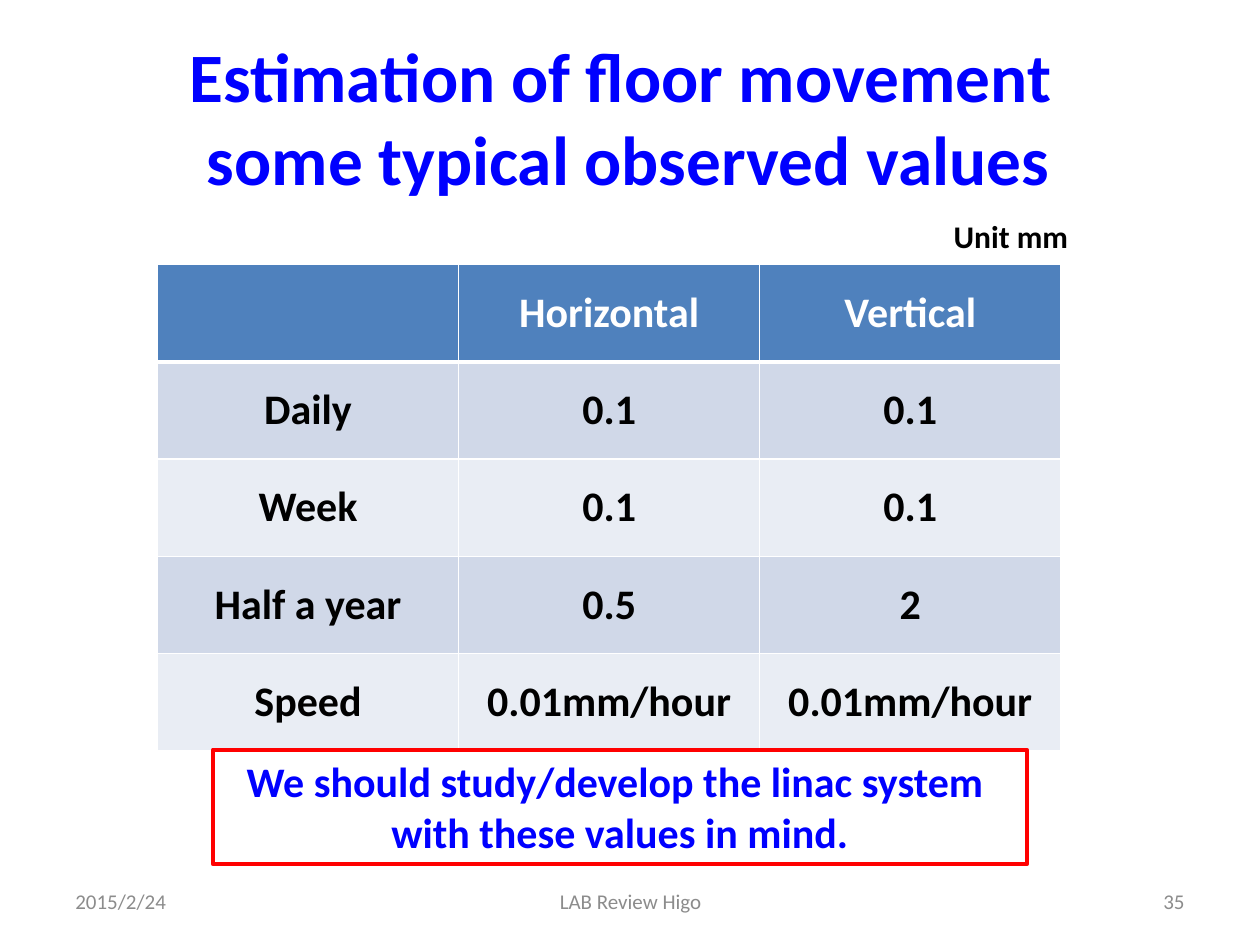
from lxml import etree
from pptx import Presentation
from pptx.dml.color import RGBColor
from pptx.enum import shapes, text
from pptx.oxml import ns
from pptx.util import Inches, Pt

BLUE, RED, BLACK, WHITE, GRAY = "0000FF", "FF0000", "000000", "FFFFFF", "8C8C8C"
HEADER_FILL, BAND_FILLS = "4F81BD", ("D0D8E8", "E9EDF4")
LEFT, CENTER, RIGHT = text.PP_ALIGN.LEFT, text.PP_ALIGN.CENTER, text.PP_ALIGN.RIGHT
ROWS = [
    ("", "Horizontal", "Vertical"),
    ("Daily", "0.1", "0.1"),
    ("Week", "0.1", "0.1"),
    ("Half a year", "0.5", "2"),
    ("Speed", "0.01mm/hour", "0.01mm/hour"),
]


def color(value):
    return RGBColor.from_string(value)


def write(frame, lines, size, font_color, bold=True, align=CENTER):
    """Fill a text frame with one paragraph for each line."""
    frame.text = "\n".join(lines)
    font_format = {"name": "Calibri", "size": Pt(size), "bold": bold}
    for paragraph in frame.paragraphs:
        paragraph.alignment = align
        for run in paragraph.runs:
            for name, value in font_format.items():
                setattr(run.font, name, value)
            run.font.color.rgb = color(font_color)


def place(shape, box):
    for name, value in zip(("left", "top", "width", "height"), box):
        setattr(shape, name, Inches(value))


def add_title(slide, box):
    title = slide.shapes.title
    place(title, box)
    frame = title.text_frame
    frame.auto_size = text.MSO_AUTO_SIZE.NONE
    frame.vertical_anchor = text.MSO_ANCHOR.MIDDLE
    write(frame, ["Estimation of floor movement\v some typical observed values"], 39.6, BLUE)


def add_label(slide, box, label, wrap=True, anchor=text.MSO_ANCHOR.MIDDLE, **style):
    frame = slide.shapes.add_textbox(*map(Inches, box)).text_frame
    frame.word_wrap = wrap
    frame.vertical_anchor = anchor
    write(frame, [label], **style)


def add_footer(slide, top, height):
    items = [
        ("2015/2/24", 0.5, 2.33, LEFT),
        ("LAB Review Higo", 3.42, 3.17, CENTER),
        ("35", 7.17, 2.33, RIGHT),
    ]
    for label, left, width, align in items:
        add_label(slide, (left, top, width, height), label,
                  size=12, font_color=GRAY, bold=False, align=align)


def set_borders(cell, widths):
    """Draw white borders; widths maps a side (L, R, T, B) to points."""
    properties = cell._tc.get_or_add_tcPr()
    for index, (side, width) in enumerate(widths.items()):
        line = etree.Element(ns.qn(f"a:ln{side}"), w=str(Pt(width)))
        fill = etree.SubElement(line, ns.qn("a:solidFill"))
        etree.SubElement(fill, ns.qn("a:srgbClr"), val=WHITE)
        properties.insert(index, line)


def add_values_table(slide, box):
    table = slide.shapes.add_table(len(ROWS), len(ROWS[0]), *map(Inches, box)).table
    for column in table.columns:
        column.width = Inches(box[2] / len(ROWS[0]))
    for row_index, values in enumerate(ROWS):
        header = row_index == 0
        fill = HEADER_FILL if header else BAND_FILLS[(row_index - 1) % 2]
        widths = {"L": 1, "R": 1, "T": 3 if row_index == 1 else 1, "B": 3 if header else 1}
        for column_index, value in enumerate(values):
            cell = table.cell(row_index, column_index)
            cell.vertical_anchor = text.MSO_ANCHOR.MIDDLE
            cell.fill.solid()
            cell.fill.fore_color.rgb = color(fill)
            write(cell.text_frame, [value], 24, WHITE if header else BLACK)
            set_borders(cell, widths)


def add_conclusion(slide, box):
    shape = slide.shapes.add_shape(shapes.MSO_SHAPE.RECTANGLE, *map(Inches, box))
    shape.shadow.inherit = False
    shape.fill.background()
    shape.line.color.rgb = color(RED)
    shape.line.width = Pt(2.25)
    shape.text_frame.word_wrap = True
    shape.text_frame.vertical_anchor = text.MSO_ANCHOR.TOP
    write(shape.text_frame,
          ["We should study/develop the linac system ", "with these values in mind."], 24, BLUE)


def main():
    presentation = Presentation()
    presentation.slide_width, presentation.slide_height = Inches(10), Inches(7.5)
    slide = presentation.slides.add_slide(presentation.slide_layouts[5])
    add_title(slide, (0.28, 0.3, 9.29, 1.25))
    add_footer(slide, 6.95, 0.4)
    add_values_table(slide, (1.25, 2.1, 7.17, 3.86))
    add_label(slide, (7.47, 1.67, 1.12, 0.4), "Unit mm", wrap=False,
              anchor=text.MSO_ANCHOR.TOP, size=18, font_color=BLACK, align=LEFT)
    add_conclusion(slide, (1.69, 5.95, 6.46, 0.91))
    presentation.save("out.pptx")


if __name__ == "__main__":
    main()
